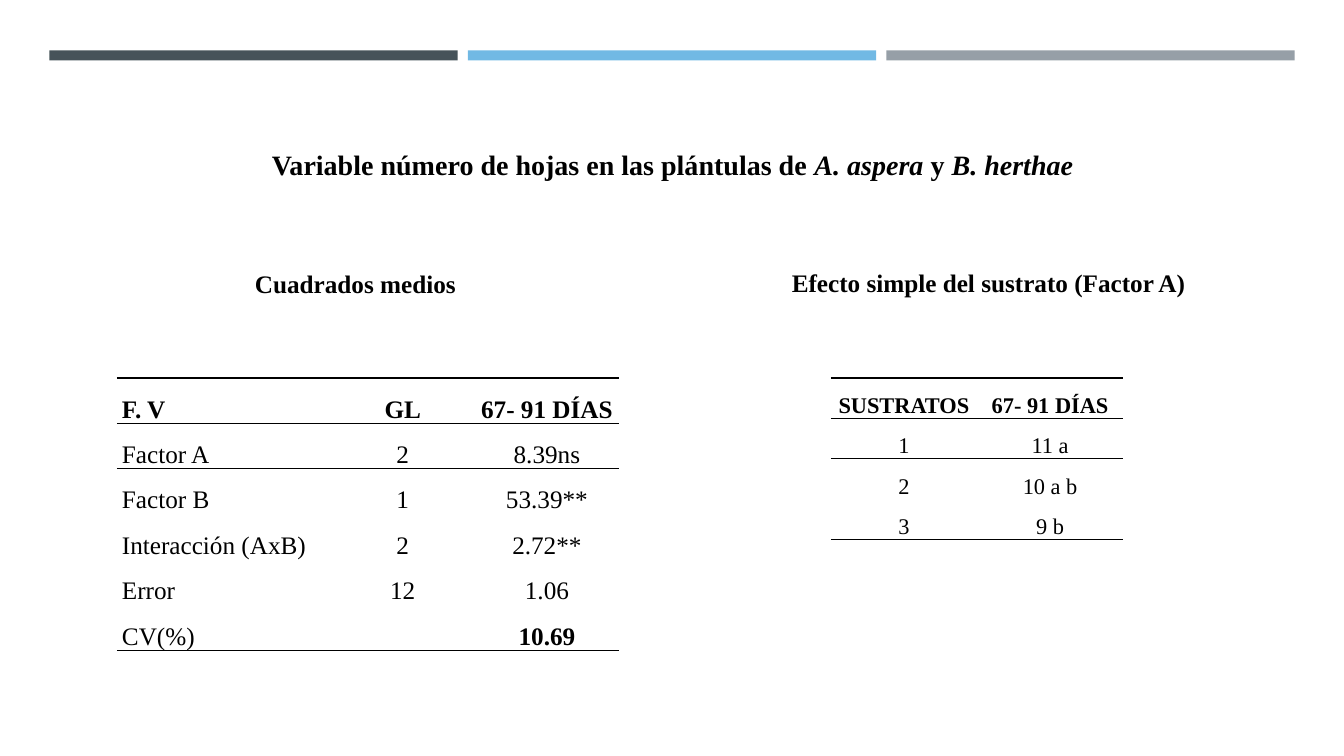
from lxml import etree
from pptx import Presentation
from pptx.dml.color import RGBColor
from pptx.enum.shapes import MSO_SHAPE
from pptx.enum.text import MSO_ANCHOR, PP_ALIGN
from pptx.oxml.ns import qn
from pptx.util import Inches, Pt

RECTANGLE = MSO_SHAPE.RECTANGLE
MIDDLE, BOTTOM = MSO_ANCHOR.MIDDLE, MSO_ANCHOR.BOTTOM
LEFT, CENTER = PP_ALIGN.LEFT, PP_ALIGN.CENTER
BLACK = "000000"
PLAIN_STYLE = "{2D5ABB26-0587-4C30-8999-92F81FD0307C}"


def color(value):
    return RGBColor.from_string(value)


def write(frame, spans, size, anchor, paragraph_format):
    frame.word_wrap = True
    frame.vertical_anchor = anchor
    para = frame.paragraphs[0]
    for name, value in paragraph_format.items():
        setattr(para, name, value)
    para.font.size = Pt(size)
    for text, font_format in spans:
        span = para.add_run()
        span.text = text
        values = {"name": "Times New Roman", "size": Pt(size), **font_format}
        for name, value in values.items():
            setattr(span.font, name, value)
        span.font.color.rgb = color(BLACK)


deck = Presentation()
deck.slide_width = Inches(13.33)
deck.slide_height = Inches(7.5)
page = deck.slides.add_slide(deck.slide_layouts[5])

for index, fill in enumerate(["465359", "71B9E4", "969FA7"]):
    bar = page.shapes.add_shape(
        RECTANGLE, Inches(0.49 + 4.15 * index), Inches(0.5), Inches(4.05), Inches(0.1)
    )
    bar.shadow.inherit = False
    bar.fill.solid()
    bar.fill.fore_color.rgb = color(fill)
    bar.line.fill.background()

title = page.shapes.title
title.left, title.top = Inches(0.64), Inches(1.41)
title.width, title.height = Inches(12.06), Inches(0.44)
bold, species = {"bold": True}, {"bold": True, "italic": True}
title_spans = [
    ("Variable número de hojas en las plántulas de ", bold),
    ("A. aspera ", species),
    ("y ", bold),
    ("B. herthae", species),
]
title_format = {"alignment": CENTER, "space_before": Pt(4), "space_after": Pt(6)}
write(title.text_frame, title_spans, 20, MIDDLE, title_format)

heading_format = {**title_format, "line_spacing": 1.1}
for left, top, text in [
    (1.35, 2.58, "Cuadrados medios"),
    (7.63, 2.57, "Efecto simple del sustrato (Factor A)"),
]:
    box = page.shapes.add_textbox(Inches(left), Inches(top), Inches(4.35), Inches(0.44))
    write(box.text_frame, [(text, bold)], 18, MIDDLE, heading_format)

variance_rows = [
    ["F. V", "GL", "67- 91 DÍAS"],
    ["Factor A", "2", "8.39ns"],
    ["Factor B", "1", "53.39**"],
    ["Interacción (AxB)", "2", "2.72**"],
    ["Error", "12", "1.06"],
    ["CV(%)", "", "10.69"],
]
substrate_rows = [
    ["SUSTRATOS", "67- 91 DÍAS"],
    ["1", "11 a"],
    ["2", "10 a b"],
    ["3", "9 b"],
]
tables = [
    (1.16, [2.12, 1.43, 1.43], 0.2, 18, LEFT, variance_rows),
    (8.24, [1.45, 1.45], 0.15, 16, CENTER, substrate_rows),
]
margins = {
    "margin_left": Inches(0.05),
    "margin_right": Inches(0.05),
    "margin_top": 0,
    "margin_bottom": 0,
}

for left, widths, row_height, size, first_alignment, rows in tables:
    frame = page.shapes.add_table(
        len(rows), len(widths), Inches(left), Inches(3.75),
        Inches(sum(widths)), Inches(row_height * len(rows)),
    )
    table = frame.table
    table._tbl.tblPr.find(qn("a:tableStyleId")).text = PLAIN_STYLE
    table.horz_banding = False
    for column, width in zip(table.columns, widths):
        column.width = Inches(width)
    last_row = len(rows) - 1
    for row_index, row in enumerate(rows):
        table.rows[row_index].height = Inches(row_height)
        edges = ["a:lnT"] if row_index == 0 else []
        if row_index in (0, 1, last_row):
            edges.append("a:lnB")
        for column_index, text in enumerate(row):
            cell = table.cell(row_index, column_index)
            for name, value in margins.items():
                setattr(cell, name, value)
            emphasis = {"bold": row_index == 0 or text == "10.69"}
            cell_format = {
                "alignment": first_alignment if column_index == 0 else CENTER,
                "line_spacing": 1.5,
                "space_after": Pt(12),
            }
            spans = [(text, emphasis)] if text else []
            write(cell.text_frame, spans, size, BOTTOM, cell_format)
            cell.vertical_anchor = BOTTOM
            properties = cell._tc.get_or_add_tcPr()
            for edge in edges:
                line = etree.SubElement(properties, qn(edge), w=str(Pt(1)))
                solid = etree.SubElement(line, qn("a:solidFill"))
                etree.SubElement(solid, qn("a:srgbClr"), val=BLACK)
            cell.fill.background()

deck.save("out.pptx")
